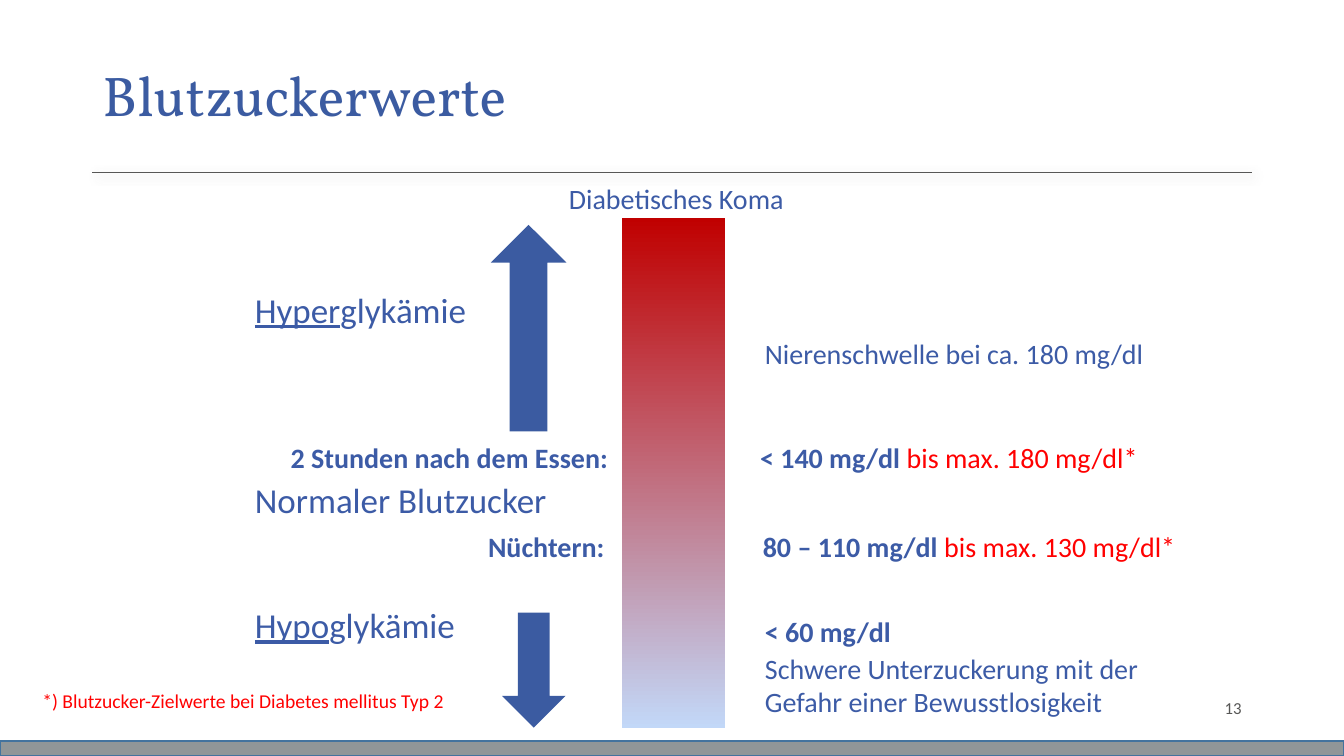
from collections import namedtuple
from dataclasses import dataclass

from lxml import etree
from pptx import Presentation
from pptx.dml.color import RGBColor
from pptx.enum.shapes import MSO_CONNECTOR, MSO_SHAPE
from pptx.enum.text import MSO_ANCHOR, MSO_AUTO_SIZE, PP_ALIGN
from pptx.oxml.ns import qn
from pptx.util import Pt

LEFT, CENTER, RIGHT = PP_ALIGN.LEFT, PP_ALIGN.CENTER, PP_ALIGN.RIGHT
TOP, MIDDLE = MSO_ANCHOR.TOP, MSO_ANCHOR.MIDDLE
NO_AUTOFIT = MSO_AUTO_SIZE.NONE
RECTANGLE, STRAIGHT = MSO_SHAPE.RECTANGLE, MSO_CONNECTOR.STRAIGHT
UP_ARROW, DOWN_ARROW = MSO_SHAPE.UP_ARROW, MSO_SHAPE.DOWN_ARROW
TITLE_ONLY = 5
INSET = 7.2

Box = namedtuple("Box", "left top width height")
Span = namedtuple("Span", "text color bold underline", defaults=(None, False, False))


@dataclass(frozen=True)
class Theme:
    body_font: str = "Calibri"
    title_font: str = "Vollkorn"
    blue: str = "3B5BA1"
    text: str = "3C5BA6"
    red: str = "FF0000"
    gray: str = "575756"
    bar: str = "909698"
    bar_line: str = "43739E"
    scale_high: str = "C00000"
    scale_low: str = "C2D8F8"
    title_size: int = 40
    level_size: int = 25
    value_size: int = 20
    note_size: int = 14
    number_size: int = 12


THEME = Theme()


def rgb(code):
    return RGBColor.from_string(code)


def inside(box, left, top, width, height):
    """Turn a place relative to a region into a place on the page."""
    return Box(box.left + left, box.top + top, width, height)


def points(box):
    return [Pt(value) for value in box]


def add_spans(para, spans, size, font=THEME.body_font):
    for span in spans:
        run = para.add_run()
        run.text = span.text
        run.font.name = font
        run.font.size = Pt(size)
        run.font.bold = span.bold
        run.font.underline = span.underline
        run.font.color.rgb = rgb(span.color or THEME.text)


def add_text(page, box, spans, size=THEME.value_size, align=LEFT, anchor=TOP, inset=True):
    """Add a one-paragraph text box and return its paragraph."""
    frame = page.shapes.add_textbox(*points(box)).text_frame
    frame.word_wrap = True
    frame.vertical_anchor = anchor
    if not inset:
        frame.margin_left = frame.margin_right = frame.margin_top = frame.margin_bottom = 0
    para = frame.paragraphs[0]
    para.alignment = align
    add_spans(para, spans, size)
    return para


def add_filled(page, kind, box, color):
    shape = page.shapes.add_shape(kind, *points(box))
    shape.shadow.inherit = False
    shape.fill.solid()
    shape.fill.fore_color.rgb = rgb(color)
    shape.line.fill.background()
    return shape


def add_rule(page, left, top, width):
    """Draw the thin header line with its soft shadow."""
    rule = page.shapes.add_connector(STRAIGHT, Pt(left), Pt(top), Pt(left + width), Pt(top))
    rule.line.color.rgb = rgb(THEME.gray)
    rule.line.width = Pt(0.5)
    effects = etree.SubElement(rule._element.spPr, qn("a:effectLst"))
    shadow = etree.SubElement(effects, qn("a:outerShdw"), blurRad=str(Pt(7)),
                              dist=str(Pt(3)), dir="2700000", rotWithShape="0")
    color = etree.SubElement(shadow, qn("a:srgbClr"), val=THEME.gray)
    etree.SubElement(color, qn("a:alpha"), val="50000")


def add_header(page, box):
    title = page.shapes.title
    title.left, title.top, title.width, title.height = points(inside(box, 0, 0, 623.5, 85))
    frame = title.text_frame
    frame.auto_size = NO_AUTOFIT
    frame.vertical_anchor = MIDDLE
    para = frame.paragraphs[0]
    para.alignment = LEFT
    para.line_spacing = 0.9
    add_spans(para, [Span("Blutzuckerwerte", THEME.blue)], THEME.title_size, THEME.title_font)
    add_rule(page, box.left, box.top + box.height, box.width)


def add_footer(page, box):
    bar = add_filled(page, RECTANGLE, inside(box, 0, 38.2, box.width, 10.8), THEME.bar)
    bar.line.color.rgb = rgb(THEME.bar_line)
    bar.line.width = Pt(1)
    add_text(page, inside(box, 678, 0, 216, 28.8), [Span("13", THEME.gray)],
             THEME.number_size, RIGHT, MIDDLE)
    note = add_text(page, inside(box, 30.2, 3, 289, 23),
                    [Span("*) Blutzucker-Zielwerte bei Diabetes mellitus Typ 2", THEME.red)],
                    THEME.note_size, inset=False)
    note.line_spacing = 0.9


def add_scale(page, box):
    """Draw the gradient column with its caption above."""
    column = add_filled(page, RECTANGLE, inside(box, 51.8, 29.5, 73.6, 364.5), THEME.scale_high)
    column.fill.gradient()
    column.fill.gradient_angle = 270
    for stop, color in zip(column.fill.gradient_stops, (THEME.scale_high, THEME.scale_low)):
        stop.color.rgb = rgb(color)
    for stop, position in zip(column.fill.gradient_stops, (0, 1)):
        stop.position = position
    add_text(page, inside(box, 0, 0, box.width, 31.5), [Span("Diabetisches Koma")], align=CENTER)


def add_levels(page, box):
    """Place the blood sugar levels and their arrows left of the scale."""
    levels = [
        (0, [Span("Hyper", underline=True), Span("glykämie")]),
        (136, [Span("Normaler Blutzucker")]),
        (225.3, [Span("Hypo", underline=True), Span("glykämie")]),
    ]
    for top, spans in levels:
        add_text(page, inside(box, 0, top, box.width, 37.4), spans, THEME.level_size)
    add_filled(page, UP_ARROW, inside(box, 175.6, -41.7, 54, 147.6), THEME.blue)
    add_filled(page, DOWN_ARROW, inside(box, 183.6, 235.4, 45.4, 82.1), THEME.blue)


def add_targets(page, box):
    """Place the target rows, each a label and a value set at a tab stop."""
    rows = [
        (0, 0, 342.5, "2 Stunden nach dem Essen:", "< 140 mg/dl ", "bis max. 180 mg/dl*"),
        (141, 64, 344.5, "Nüchtern:", "80 – 110 mg/dl ", "bis max. 130 mg/dl*"),
    ]
    for left, top, value_left, label, value, limit in rows:
        spans = [Span(f"{label}\t{value}", bold=True), Span(limit, THEME.red)]
        para = add_text(page, inside(box, left, top, box.width - left, 31.5), spans)
        tabs = etree.SubElement(para._p.get_or_add_pPr(), qn("a:tabLst"))
        stop = Pt(value_left - left - INSET)
        etree.SubElement(tabs, qn("a:tab"), pos=str(stop), algn="l")


def add_thresholds(page, box):
    thresholds = [
        (0, 31.5, Span("Nierenschwelle bei ca. 180 mg/dl")),
        (198.7, 31.5, Span("< 60 mg/dl", bold=True)),
        (224.6, 55.7, Span("Schwere Unterzuckerung mit der Gefahr einer Bewusstlosigkeit")),
    ]
    for top, height, span in thresholds:
        add_text(page, inside(box, 0, top, box.width, height), [span])


def main():
    deck = Presentation()
    deck.slide_width, deck.slide_height = Pt(960), Pt(540)
    page = deck.slides.add_slide(deck.slide_layouts[TITLE_ONLY])
    add_header(page, Box(66, 28, 828, 95))
    add_footer(page, Box(0, 491, 960, 49))
    add_scale(page, Box(392.4, 126, 181.4, 394))
    add_levels(page, Box(175, 202.3, 256, 318))
    add_targets(page, Box(200.5, 311, 649, 96))
    add_thresholds(page, Box(539.3, 236.9, 298, 281))
    deck.save("out.pptx")


if __name__ == "__main__":
    main()
